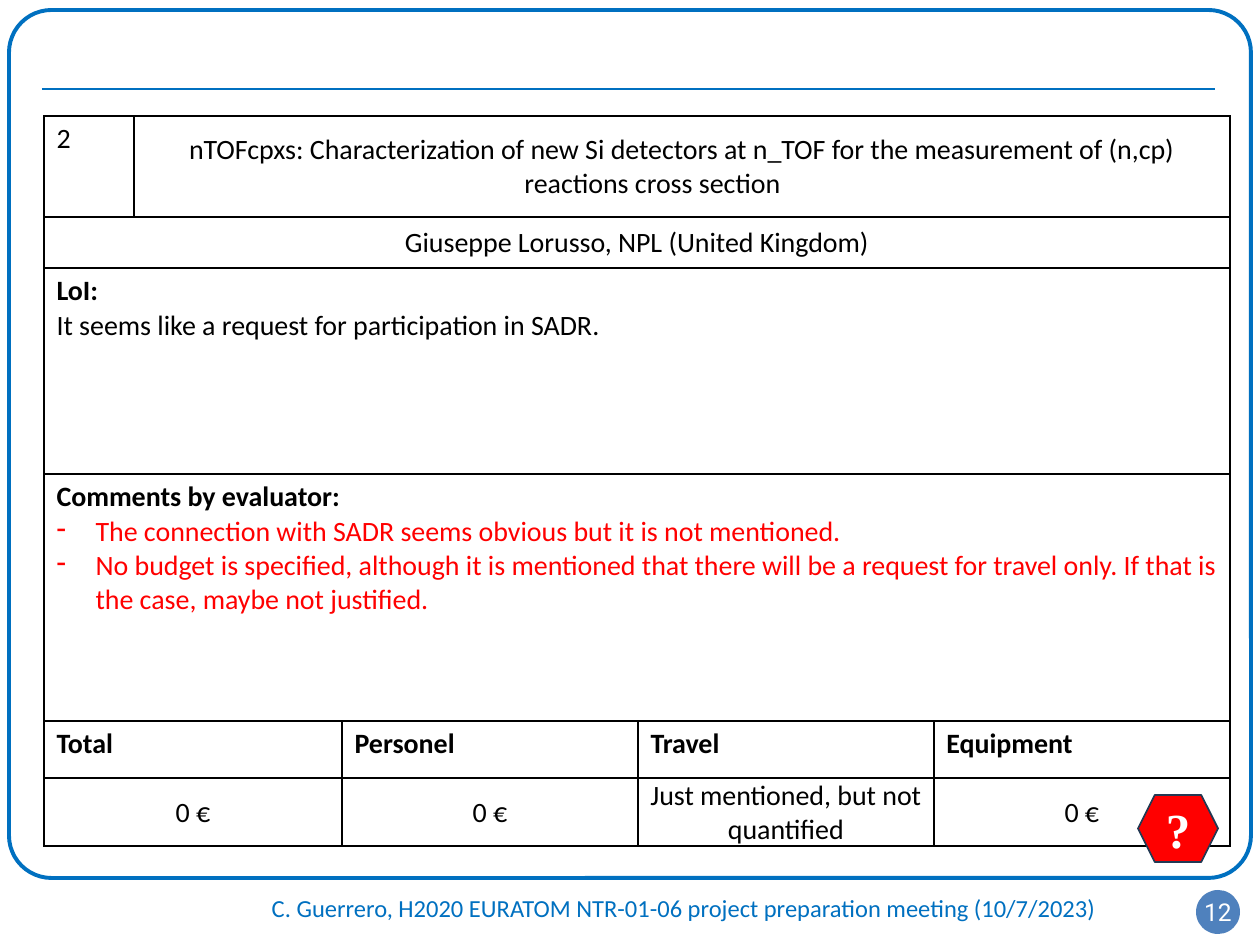
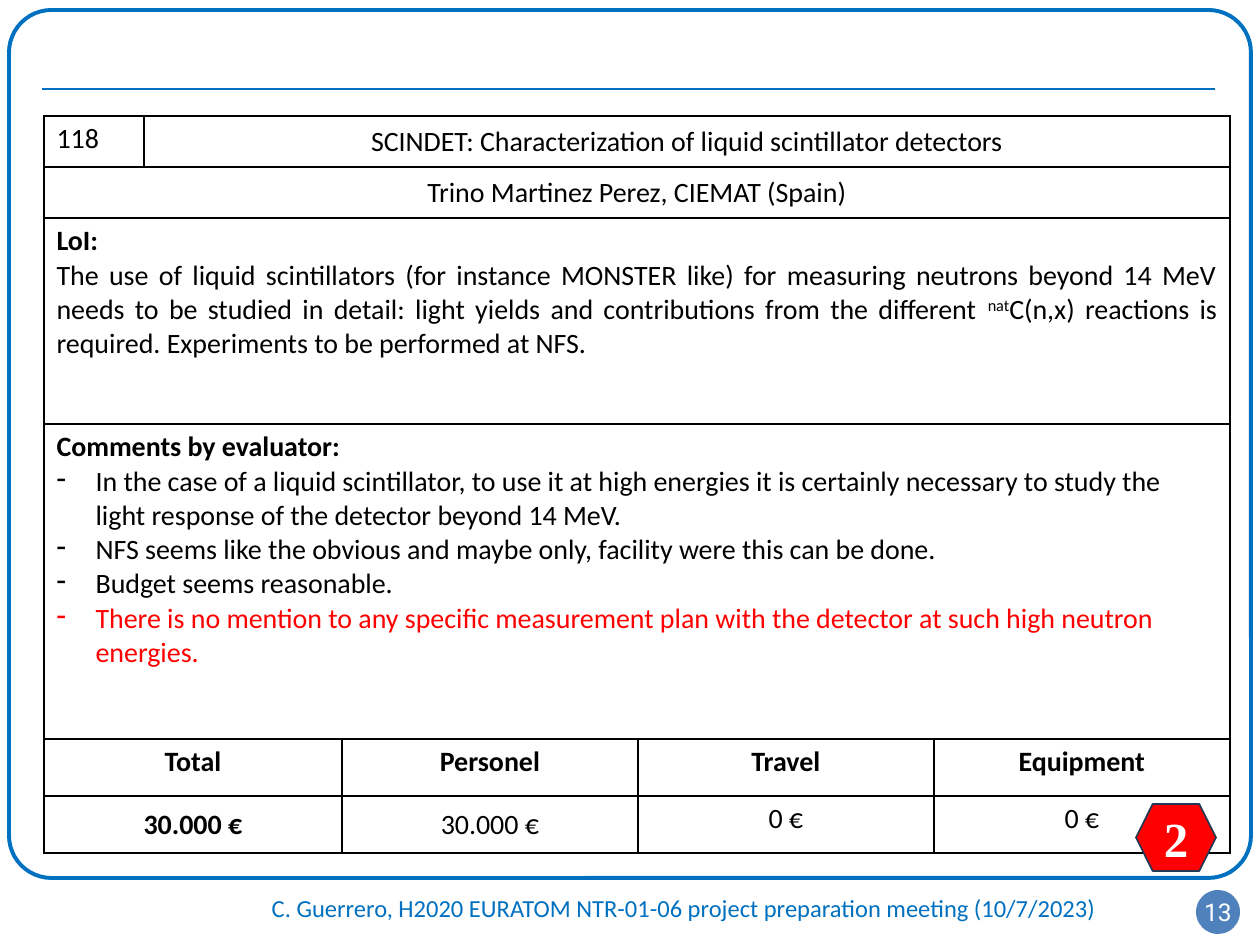
from dataclasses import dataclass

from lxml import etree
from pptx import Presentation
from pptx import util as u
from pptx.dml.color import RGBColor
from pptx.enum import shapes, text
from pptx.oxml import ns

PX = 914400 / 126
KIND = shapes.MSO_SHAPE
LEFT, MID, JUST = text.PP_ALIGN.LEFT, text.PP_ALIGN.CENTER, text.PP_ALIGN.JUSTIFY


@dataclass(frozen=True)
class Theme:
    blue: str = "0070C0"
    badge: str = "4F81BD"
    red: str = "FF0000"
    edge: str = "233953"
    ink: str = "000000"
    paper: str = "FFFFFF"
    body: str = "Calibri"
    digit: str = "Roboto"
    serif: str = "Times New Roman"
    small: int = 14
    base: int = 16
    mark: int = 28


T = Theme()
FOOT = "C. Guerrero, H2020 EURATOM NTR-01-06 project preparation meeting (10/7/2023)"
WIDE, QUART, INDENT = 1186, 296, 39


# Shared helpers
def px(n):
    return u.Emu(round(n * PX))


def put(obj, **vals):
    for key, val in vals.items():
        setattr(obj, key, val)


def inset(obj, left, top, right, foot):
    put(obj, margin_left=px(left), margin_top=px(top),
        margin_right=px(right), margin_bottom=px(foot))


def sub(node, tag, **attrs):
    return etree.SubElement(node, ns.qn(tag), attrs)


# Text: parts between ^ signs are raised
def write(par, words, align=LEFT, size=T.base, face=T.body, color=T.ink,
          bold=False, bullet=False):
    par.alignment = align
    if bullet:
        props = par._p.get_or_add_pPr()
        props.set("marL", str(px(INDENT)))
        props.set("indent", str(-px(INDENT)))
        sub(props, "a:buChar", char="-")
    for i, part in enumerate(words.split("^")):
        run = par.add_run()
        run.text = part
        put(run.font, size=u.Pt(size), name=face, bold=bold)
        run.font.color.rgb = RGBColor.from_string(color)
        if i % 2:
            run._r.get_or_add_rPr().set("baseline", "30000")


def fill(frame, lines):
    for i, (words, style) in enumerate(lines):
        par = frame.add_paragraph() if i else frame.paragraphs[0]
        write(par, words, **style)


# Shapes
def shape(slide, kind, box, color, edge=None, width=1):
    item = slide.shapes.add_shape(kind, *map(px, box))
    item.shadow.inherit = False
    item.fill.solid()
    item.fill.fore_color.rgb = RGBColor.from_string(color)
    if edge:
        item.line.color.rgb = RGBColor.from_string(edge)
        item.line.width = u.Pt(width)
    else:
        item.line.fill.background()
    item.text_frame.vertical_anchor = text.MSO_ANCHOR.MIDDLE
    return item


def rule(slide, x1, x2, y):
    line = slide.shapes.add_connector(
        shapes.MSO_CONNECTOR.STRAIGHT, px(x1), px(y), px(x2), px(y))
    line.line.color.rgb = RGBColor.from_string(T.blue)
    line.line.width = u.Pt(1.5)
    sub(line._element.spPr, "a:effectLst")


def frame(slide, page):
    card = shape(slide, KIND.ROUNDED_RECTANGLE, (9, 10, 1242, 868),
                 T.paper, T.blue, 2.25)
    card.adjustments[0] = 0.049
    foot = slide.shapes.add_textbox(*map(px, (213, 887, 942, 49))).text_frame
    foot.word_wrap = True
    inset(foot, 13, 6, 13, 13)
    write(foot.paragraphs[0], FOOT, MID, T.small, color=T.blue)
    rule(slide, 42, 1215, 89)
    disc = shape(slide, KIND.OVAL, (1196, 890, 44, 44), T.badge).text_frame
    disc.word_wrap = False
    inset(disc, 0, 0, 0, 0)
    write(disc.paragraphs[0], str(page), MID, T.small, T.digit, T.paper)


def grade(slide, mark, x, y):
    hexa = shape(slide, KIND.HEXAGON, (x, y, 80, 67), T.red, T.edge)
    write(hexa.text_frame.paragraphs[0], mark, MID, T.mark, T.serif,
          T.paper, True)


# Table
def border(cell):
    cell.fill.background()
    props = cell._tc.get_or_add_tcPr()
    for i, side in enumerate(("a:lnL", "a:lnR", "a:lnT", "a:lnB")):
        line = etree.Element(ns.qn(side), w=str(u.Pt(1)))
        sub(sub(line, "a:solidFill"), "a:srgbClr", val=T.ink)
        props.insert(i, line)


def entry(cell, lines, tight=False):
    if tight:
        inset(cell, 1, 1, 1, 0)
        cell.vertical_anchor = text.MSO_ANCHOR.MIDDLE
    fill(cell.text_frame, lines)


def sheet(slide, first, rows, data):
    holder = slide.shapes.add_table(
        len(rows), 5, px(44), px(116), px(WIDE), px(sum(rows)))
    grid = holder.table
    put(grid, first_row=False, horz_banding=False)
    cols = [first, WIDE - 3 * QUART - first] + [QUART] * 3
    for col, wide in zip(grid.columns, cols):
        col.width = px(wide)
    for row, high in zip(grid.rows, rows):
        row.height = px(high)
    for cell in grid.iter_cells():
        border(cell)
    spans = [(0, 1, 4), (1, 0, 4), (2, 0, 4), (3, 0, 4), (4, 0, 1), (5, 0, 1)]
    for row, start, end in spans:
        grid.cell(row, start).merge(grid.cell(row, end))

    # Proposal, letter of intent and evaluation
    center = {"align": MID}
    entry(grid.cell(0, 0), [(data["id"], {})])
    entry(grid.cell(0, 1), [(data["name"], center)], True)
    entry(grid.cell(1, 0), [(data["lead"], center)], True)
    entry(grid.cell(2, 0), [("LoI:", {"align": JUST, "bold": True}),
                            (data["intent"], {"align": JUST})])
    notes = [(words, {"bullet": True, "color": color})
             for words, color in data["notes"]]
    entry(grid.cell(3, 0), [("Comments by evaluator:", {"bold": True})] + notes)

    # Budget
    heads = ("Total", "Personel", "Travel", "Equipment")
    for col, head, cost in zip((0, 2, 3, 4), heads, data["costs"]):
        words, bold, tight = cost
        entry(grid.cell(4, col), [(head, {"align": data["align"], "bold": True})])
        entry(grid.cell(5, col), [(words, {"align": MID, "bold": bold})], tight)


SILICON = {
    "id": "2",
    "name": "nTOFcpxs: Characterization of new Si detectors at n_TOF for the "
            "measurement of (n,cp) reactions cross section\t",
    "lead": "Giuseppe Lorusso, NPL (United Kingdom)",
    "intent": "It seems like a request for participation in SADR.",
    "notes": [
        ("The connection with SADR seems obvious but it is not mentioned.", T.red),
        ("No budget is specified, although it is mentioned that there will be a "
         "request for travel only. If that is the case, maybe not justified.",
         T.red)],
    "align": LEFT,
    "costs": [("0 €", False, True), ("0 €", False, True),
              ("Just mentioned, but not quantified", False, True),
              ("0 €", False, True)],
}
LIQUID = {
    "id": "118",
    "name": "SCINDET: Characterization of liquid scintillator detectors",
    "lead": "Trino Martinez Perez, CIEMAT (Spain)",
    "intent": "The use of liquid scintillators (for instance MONSTER like) for "
              "measuring neutrons beyond 14 MeV needs to be studied in detail: "
              "light yields and contributions from the different ^nat^C(n,x) "
              "reactions is required. Experiments to be performed at NFS.",
    "notes": [
        ("In the case of a liquid scintillator, to use it at high energies it is "
         "certainly necessary to study the light response of the detector beyond "
         "14 MeV.", T.ink),
        ("NFS seems like the obvious and maybe only, facility were this can be "
         "done.", T.ink),
        ("Budget seems reasonable.", T.ink),
        ("There is no mention to any specific measurement plan with the detector "
         "at such high neutron energies.", T.red)],
    "align": MID,
    "costs": [("30.000 €", True, True), ("30.000 €", False, True),
              ("0 €", False, False), ("0 €", False, False)],
}


def main():
    deck = Presentation()
    put(deck, slide_width=px(1260), slide_height=px(945))
    pages = [
        (12, 90, (101, 51, 206, 247, 57, 68), SILICON, ("?", 1138, 795)),
        (13, 100, (51, 51, 206, 315, 57, 57), LIQUID, ("2", 1136, 804)),
    ]
    for page, first, rows, data, mark in pages:
        slide = deck.slides.add_slide(deck.slide_layouts[6])
        frame(slide, page)
        sheet(slide, first, rows, data)
        grade(slide, *mark)
    deck.save("out.pptx")


if __name__ == "__main__":
    main()
